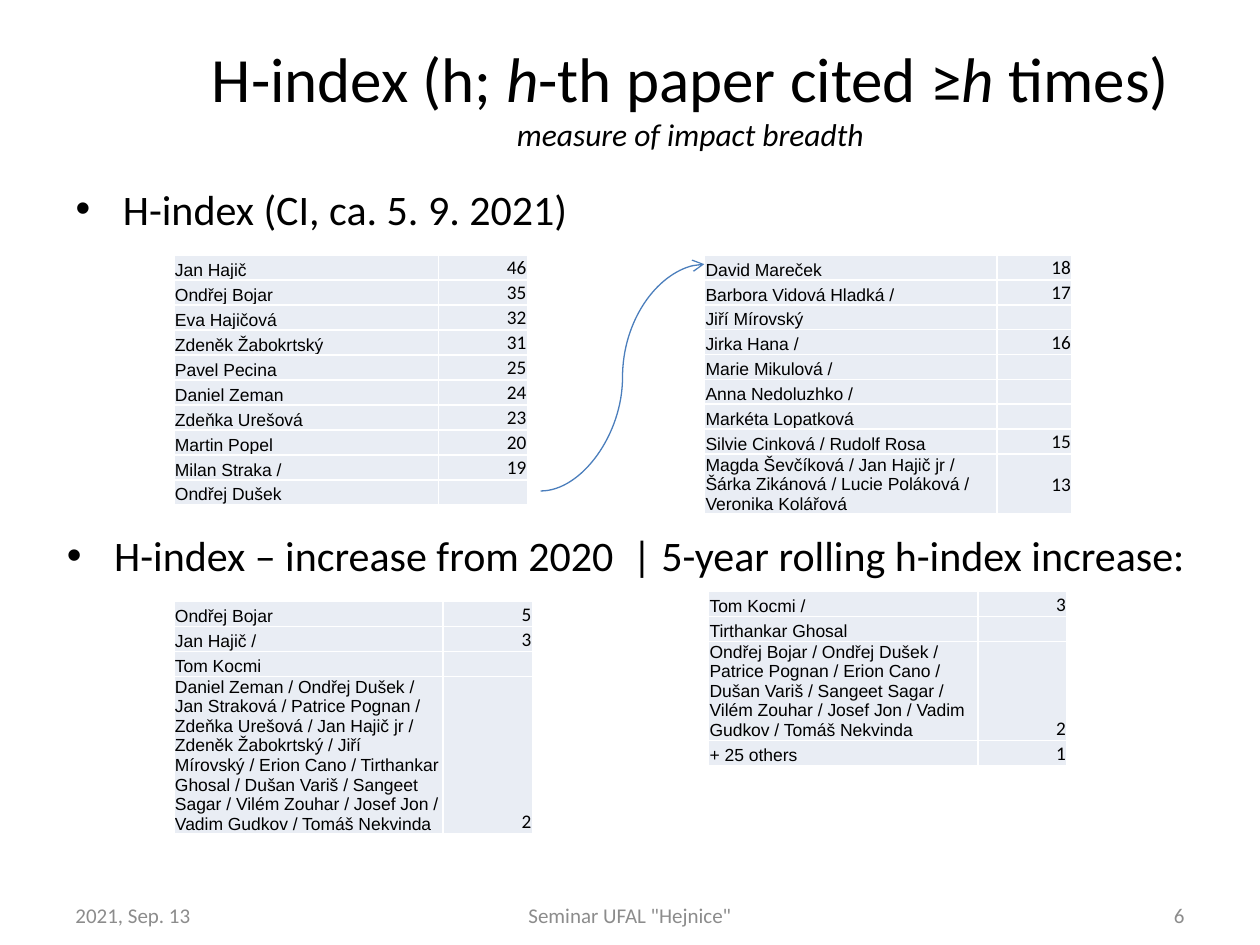
import pptx
import pptx.util
import pptx.dml.color
import pptx.enum.shapes
import pptx.enum.text
import pptx.oxml.ns
from lxml import etree

Pt = pptx.util.Pt
ALIGN = pptx.enum.text.PP_ALIGN
ANCHOR = pptx.enum.text.MSO_ANCHOR
COLORS = {"text": "000000", "footer": "8C8C8C", "cell": "E9EDF4", "arrow": "4B7EBC"}
ROW_HEIGHT = 14.2


def rgb(name):
    return pptx.dml.color.RGBColor.from_string(COLORS[name])


def apply(target, values):
    for name, value in values.items():
        setattr(target, name, value)


def add_xml(parent, tag, **attributes):
    return etree.SubElement(parent, pptx.oxml.ns.qn(tag), attributes)


class SlideBuilder:
    """Holds the style and the current slide; lengths are points."""

    name_font = {"name": "Arial", "size": Pt(10)}
    value_font = {"name": "Calibri", "size": Pt(11)}
    bullet_font = {"name": "Calibri", "size": Pt(24)}
    footer_font = {"name": "Calibri", "size": Pt(12)}

    def __init__(self, prs, layout):
        self.s = prs.slides.add_slide(prs.slide_layouts[layout])

    def place(self, sp, left, top, width, height, anchor):
        apply(sp, {"left": Pt(left), "top": Pt(top),
                   "width": Pt(width), "height": Pt(height)})
        apply(sp.text_frame, {"word_wrap": True, "vertical_anchor": anchor,
                              "auto_size": pptx.enum.text.MSO_AUTO_SIZE.NONE})
        return sp.text_frame.paragraphs[0]

    def run(self, p, text, font, color="text"):
        r = p.add_run()
        r.text = text
        apply(r.font, font)
        r.font.color.rgb = rgb(color)

    def title(self, box, lines):
        p = self.place(self.s.shapes.title, *box, ANCHOR.MIDDLE)
        p.alignment = ALIGN.CENTER
        for i, (size, parts) in enumerate(lines):
            if i:
                p.add_line_break()
            for text, italic in parts:
                self.run(p, text, {"name": "Calibri", "size": Pt(size), "italic": italic})

    def bullet(self, index, box, text):
        p = self.place(self.s.placeholders[index], *box, ANCHOR.TOP)
        p.space_before = Pt(0)
        self.run(p, text, self.bullet_font)

    def footer(self, box, text, align):
        sp = self.s.shapes.add_textbox(0, 0, 0, 0)
        p = self.place(sp, *box, ANCHOR.MIDDLE)
        p.alignment = align
        self.run(p, text, self.footer_font, "footer")

    def cell(self, cell, text, font, align, anchor):
        apply(cell, {"margin_left": Pt(0.7), "margin_right": Pt(0.7),
                     "margin_top": Pt(0.7), "margin_bottom": 0,
                     "vertical_anchor": anchor})
        cell.fill.solid()
        cell.fill.fore_color.rgb = rgb("cell")
        p = cell.text_frame.paragraphs[0]
        p.alignment = align
        if text:
            self.run(p, text, font)
        else:  # an empty cell still needs a small font to keep its row low
            add_xml(p._p, "a:endParaRPr", sz="1000")

    def table(self, left, top, widths, rows, tall=None, middle=()):
        """rows: (name, value); tall: row heights that differ; middle: centred values."""
        heights = [(tall or {}).get(i, ROW_HEIGHT) for i in range(len(rows))]
        table = self.s.shapes.add_table(
            len(rows), 2, Pt(left), Pt(top), Pt(sum(widths)), Pt(sum(heights))).table
        apply(table, {"first_row": False, "horz_banding": False})
        for column, width in zip(table.columns, widths):
            column.width = Pt(width)
        for i, (name, value) in enumerate(rows):
            table.rows[i].height = Pt(heights[i])
            self.cell(table.cell(i, 0), name, self.name_font, ALIGN.LEFT, ANCHOR.BOTTOM)
            self.cell(table.cell(i, 1), value, self.value_font, ALIGN.RIGHT,
                      ANCHOR.MIDDLE if i in middle else ANCHOR.BOTTOM)

    def curved_arrow(self, x1, y1, x2, y2):
        line = self.s.shapes.add_connector(
            pptx.enum.shapes.MSO_CONNECTOR.CURVE, Pt(x1), Pt(y1), Pt(x2), Pt(y2))
        line.line.color.rgb = rgb("arrow")
        line.line.width = Pt(0.75)
        add_xml(line.line._get_or_add_ln(), "a:tailEnd", type="arrow")
        add_xml(line._element.spPr, "a:effectLst")


def main():
    prs = pptx.Presentation()
    prs.slide_width, prs.slide_height = Pt(720), Pt(540)
    b = SlideBuilder(prs, 3)

    # Title and section headings
    b.title((105, 10, 579, 90), [
        (36, [("H-index (h; ", False), ("h", True), ("-th paper cited ≥", False),
              ("h", True), (" times)", False)]),
        (18, [("measure of impact breadth", True)])])
    b.bullet(1, (36, 101, 648, 203), "H-index (CI, ca. 5. 9. 2021)")
    b.bullet(2, (31, 299, 663, 203),
             "H-index – increase from 2020  | 5-year rolling h-index increase:")

    # H-index ranking, continued in the right table
    b.table(99.3, 145.6, (151.3, 50.9), [
        ("Jan Hajič", "46"), ("Ondřej Bojar", "35"), ("Eva Hajičová", "32"),
        ("Zdeněk Žabokrtský", "31"), ("Pavel Pecina", "25"), ("Daniel Zeman", "24"),
        ("Zdeňka Urešová", "23"), ("Martin Popel", "20"), ("Milan Straka /", "19"),
        ("Ondřej Dušek", "")])
    b.table(402.5, 145.6, (167.2, 43), [
        ("David Mareček", "18"), ("Barbora Vidová Hladká /", "17"),
        ("Jiří Mírovský", ""), ("Jirka Hana /", "16"), ("Marie Mikulová /", ""),
        ("Anna Nedoluzhko /", ""), ("Markéta Lopatková", ""),
        ("Silvie Cinková / Rudolf Rosa", "15"),
        ("Magda Ševčíková / Jan Hajič jr / Šárka Zikánová / Lucie Poláková / "
         "Veronika Kolářová", "13")], tall={8: 33.5}, middle=(8,))
    b.curved_arrow(309, 280.6, 402.5, 151)

    # Increase from 2020 and 5-year rolling increase
    b.table(99.3, 343.7, (154, 51), [
        ("Ondřej Bojar", "5"), ("Jan Hajič /", "3"), ("Tom Kocmi", ""),
        ("Daniel Zeman / Ondřej Dušek / Jan Straková / Patrice Pognan / "
         "Zdeňka Urešová / Jan Hajič jr / Zdeněk Žabokrtský / Jiří Mírovský / "
         "Erion Cano / Tirthankar Ghosal / Dušan Variš / Sangeet Sagar / "
         "Vilém Zouhar / Josef Jon / Vadim Gudkov / Tomáš Nekvinda", "2")],
        tall={3: 89})
    b.table(404.8, 338, (154, 51), [
        ("Tom Kocmi /", "3"), ("Tirthankar Ghosal", ""),
        ("Ondřej Bojar / Ondřej Dušek / Patrice Pognan / Erion Cano / "
         "Dušan Variš / Sangeet Sagar / Vilém Zouhar / Josef Jon / "
         "Vadim Gudkov / Tomáš Nekvinda", "2"),
        ("+ 25 others", "1")], tall={2: 56.5})

    # Footer
    b.footer((36, 508.5, 168, 28.75), "2021, Sep. 13", ALIGN.LEFT)
    b.footer((246, 508.5, 228, 28.75), "Seminar UFAL \"Hejnice\"", ALIGN.CENTER)
    b.footer((516, 508.5, 168, 28.75), "6", ALIGN.RIGHT)

    prs.save("out.pptx")


if __name__ == "__main__":
    main()
